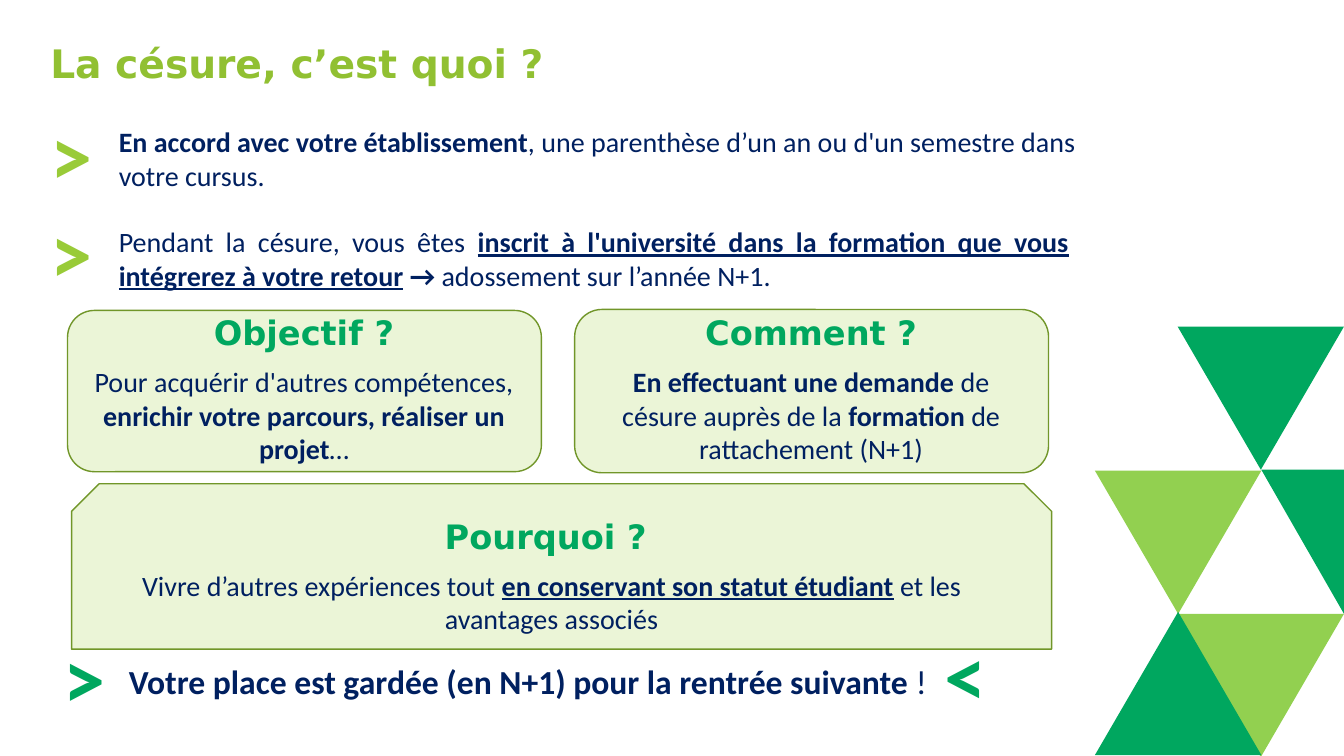
"""Build the slide that explains what a gap year (césure) is."""
from dataclasses import dataclass

from pptx import Presentation
from pptx.dml.color import RGBColor
from pptx.enum.shapes import MSO_SHAPE
from pptx.enum.text import PP_ALIGN
from pptx.shapes.autoshape import Shape
from pptx.slide import Slide
from pptx.text.text import _Paragraph
from pptx.util import Inches, Pt

GREEN = RGBColor(0x00, 0xA7, 0x5F)
LIME = RGBColor(0x92, 0xD0, 0x50)
TITLE_LIME = RGBColor(0x91, 0xC0, 0x32)
CHEVRON_LIME = RGBColor(0x99, 0xCB, 0x38)
CARD_FILL = RGBColor(0xEB, 0xF5, 0xD7)
CARD_LINE = RGBColor(0x71, 0x96, 0x29)
NAVY = RGBColor(0x00, 0x20, 0x60)
HEADING_FONT = "DejaVu Sans"
BODY_FONT = "Calibri"


@dataclass(frozen=True)
class Box:
    left: float
    top: float
    width: float
    height: float


@dataclass(frozen=True)
class Span:
    text: str
    bold: bool = False
    underline: bool = False


@dataclass(frozen=True)
class Triangle:
    left: float
    top: float
    color: RGBColor
    rotation: int = 180


@dataclass(frozen=True)
class Card:
    outline: MSO_SHAPE
    frame: Box
    text_area: Box
    heading: str
    body: tuple[Span, ...]


@dataclass(frozen=True)
class Chevron:
    left: float
    top: float
    color: RGBColor
    rotation: int = 0


TRIANGLES = (
    Triangle(11.68, 6.09, LIME),
    Triangle(10.86, 4.67, LIME),
    Triangle(11.68, 3.24, GREEN),
    Triangle(10.86, 6.07, GREEN, rotation=0),
)
EDGE_TRIANGLE = ((12.51, 4.66), (13.35, 4.66), (13.33, 6.09))

CARDS = (
    Card(
        MSO_SHAPE.ROUNDED_RECTANGLE,
        Box(0.67, 3.08, 4.7, 1.6),
        Box(0.79, 3.05, 4.45, 1.63),
        "Objectif ?",
        (
            Span("Pour acquérir d'autres compétences, "),
            Span("enrichir votre parcours, réaliser un projet", bold=True),
            Span("…"),
        ),
    ),
    Card(
        MSO_SHAPE.ROUNDED_RECTANGLE,
        Box(5.7, 3.07, 4.7, 1.62),
        Box(5.81, 3.05, 4.47, 1.63),
        "Comment ?",
        (
            Span("En effectuant une demande ", bold=True),
            Span("de césure auprès de la "),
            Span("formation ", bold=True),
            Span("de rattachement (N+1)"),
        ),
    ),
    Card(
        MSO_SHAPE.SNIP_2_SAME_RECTANGLE,
        Box(0.71, 4.8, 9.72, 1.64),
        Box(0.96, 5.07, 9.02, 1.3),
        "Pourquoi ? ",
        (
            Span("Vivre d’autres expériences tout "),
            Span("en conservant son statut étudiant", bold=True, underline=True),
            Span(" et les avantages associés"),
        ),
    ),
)

CHEVRONS = (
    Chevron(0.4, 0.97, CHEVRON_LIME),
    Chevron(0.4, 1.94, CHEVRON_LIME),
    Chevron(0.53, 6.16, GREEN),
    Chevron(9.26, 6.26, GREEN, rotation=180),
)

AGREEMENT = (
    Span("En accord avec votre établissement", bold=True),
    Span(", une parenthèse d’un an ou d'un semestre dans votre cursus."),
)
ENROLMENT = (
    Span("Pendant la césure, vous êtes "),
    Span(
        "inscrit à l'université dans la formation que vous intégrerez à votre retour",
        bold=True,
        underline=True,
    ),
    Span(" → ", bold=True),
    Span("adossement sur l’année N+1."),
)
GUARANTEE = (
    Span("Votre place est gardée (en N+1) pour la rentrée suivante ", bold=True),
    Span("!"),
)


def write_spans(paragraph: _Paragraph, spans: tuple[Span, ...], *, size: float = 20,
                color: RGBColor = NAVY, font: str = BODY_FONT,
                align: PP_ALIGN = PP_ALIGN.LEFT) -> None:
    paragraph.alignment = align
    for span in spans:
        run = paragraph.add_run()
        run.text = span.text
        run.font.name = font
        run.font.size = Pt(size)
        run.font.color.rgb = color
        run.font.bold = span.bold
        run.font.underline = span.underline


def add_text(slide: Slide, box: Box, spans: tuple[Span, ...], *, wrap: bool = True,
             **text_format) -> Shape:
    shape = slide.shapes.add_textbox(
        Inches(box.left), Inches(box.top), Inches(box.width), Inches(box.height))
    shape.text_frame.word_wrap = wrap
    write_spans(shape.text_frame.paragraphs[0], spans, **text_format)
    return shape


def paint(shape: Shape, color: RGBColor) -> None:
    shape.shadow.inherit = False
    shape.fill.solid()
    shape.fill.fore_color.rgb = color
    shape.line.fill.background()


def add_preset(slide: Slide, preset: MSO_SHAPE, box: Box, color: RGBColor) -> Shape:
    shape = slide.shapes.add_shape(
        preset, Inches(box.left), Inches(box.top), Inches(box.width), Inches(box.height))
    paint(shape, color)
    return shape


def add_triangles(slide: Slide) -> None:
    for triangle in TRIANGLES:
        box = Box(triangle.left, triangle.top, 1.65, 1.42)
        shape = add_preset(slide, MSO_SHAPE.ISOSCELES_TRIANGLE, box, triangle.color)
        shape.rotation = triangle.rotation
    start, *corners = [(Inches(x), Inches(y)) for x, y in EDGE_TRIANGLE]
    builder = slide.shapes.build_freeform(*start)
    builder.add_line_segments(corners, close=True)
    paint(builder.convert_to_shape(), GREEN)


def add_card(slide: Slide, card: Card) -> None:
    outline = add_preset(slide, card.outline, card.frame, CARD_FILL)
    outline.line.color.rgb = CARD_LINE
    outline.line.width = Pt(1)
    text_box = add_text(slide, card.text_area, (Span(card.heading, bold=True),), size=24,
                        color=GREEN, font=HEADING_FONT, align=PP_ALIGN.CENTER)
    body = text_box.text_frame.add_paragraph()
    body.space_before = Pt(8.5)
    write_spans(body, card.body, align=PP_ALIGN.CENTER)


def main() -> None:
    presentation = Presentation()
    presentation.slide_width = Inches(13.33)
    presentation.slide_height = Inches(7.5)
    slide = presentation.slides.add_slide(presentation.slide_layouts[6])
    add_triangles(slide)
    title = add_text(slide, Box(0.4, 0.39, 10.98, 0.58),
                     (Span("La césure, c’est quoi ?", bold=True),),
                     size=28, color=TITLE_LIME, font=HEADING_FONT)
    title.text_frame.paragraphs[0].line_spacing = 0.9
    add_text(slide, Box(1.08, 1.19, 9.98, 0.77), AGREEMENT)
    add_text(slide, Box(1.08, 2.18, 9.62, 0.77), ENROLMENT, align=PP_ALIGN.JUSTIFY)
    for card in CARDS:
        add_card(slide, card)
    add_text(slide, Box(1.18, 6.51, 8.18, 0.5), GUARANTEE, size=24)
    for chevron in CHEVRONS:
        shape = add_text(slide, Box(chevron.left, chevron.top, 0.62, 1.11),
                         (Span(">", bold=True),), wrap=False, size=60, color=chevron.color)
        shape.rotation = chevron.rotation
    presentation.save("out.pptx")


if __name__ == "__main__":
    main()
